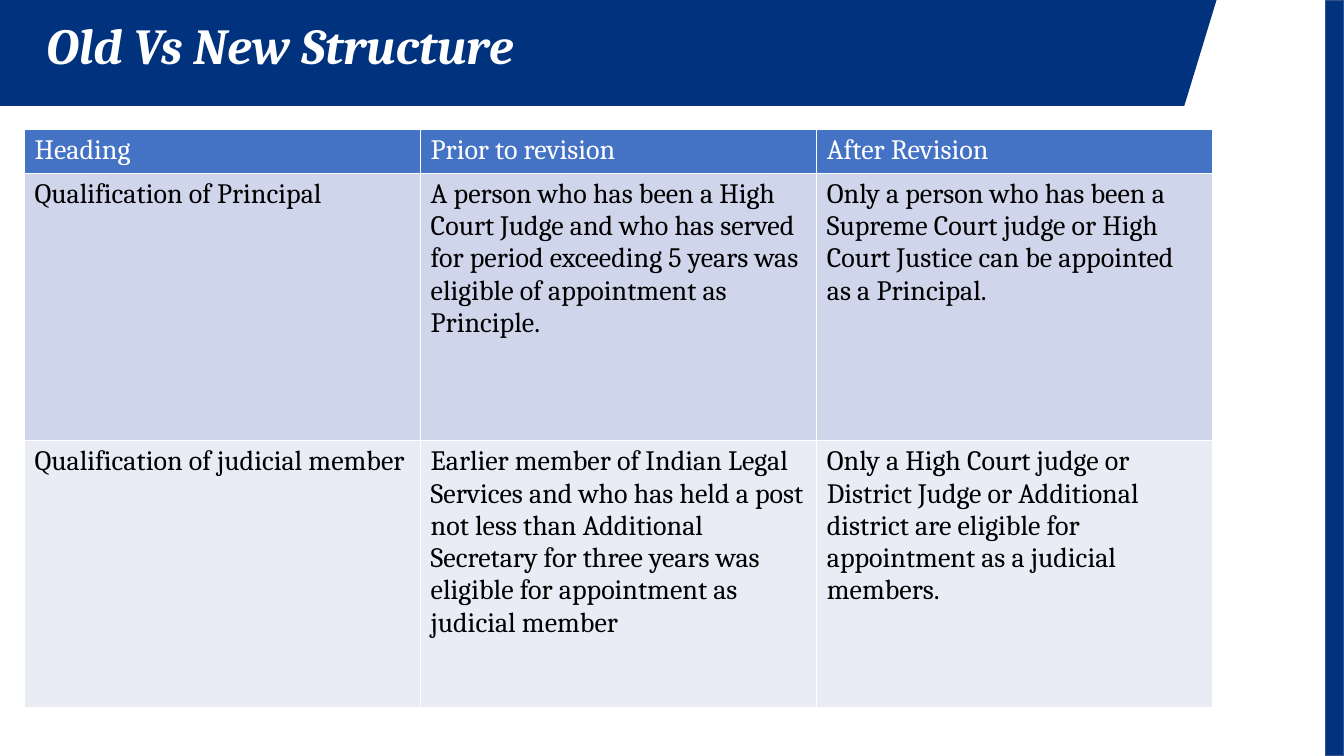
from dataclasses import dataclass

import pptx
import pptx.dml.color
import pptx.enum.shapes
import pptx.enum.text
import pptx.oxml
import pptx.oxml.ns
import pptx.util

Pt = pptx.util.Pt
NAVY = "00327D"
WHITE = "FFFFFF"
FONT = "Cambria"


@dataclass
class Row:
    height: float
    fill: str
    color: str
    texts: tuple[str, str, str]


ROWS = [
    Row(30, "4472C4", WHITE, ("Heading", "Prior to revision", "After Revision")),
    Row(191, "CFD5EA", "000000", (
        "Qualification of Principal",
        "A person who has been a High Court Judge and who has served for period "
        "exceeding 5 years was eligible of appointment as Principle.",
        "Only a person who has been a Supreme Court judge or High Court Justice "
        "can be appointed as a Principal.",
    )),
    Row(191, "E9EBF5", "000000", (
        "Qualification of judicial member",
        "Earlier member of Indian Legal Services and who has held a post not less than "
        "Additional Secretary for three years was eligible for appointment as judicial member",
        "Only a High Court judge or District Judge or Additional district are eligible "
        "for appointment as a judicial members.",
    )),
]


def rgb(value: str) -> pptx.dml.color.RGBColor:
    return pptx.dml.color.RGBColor.from_string(value)


def fill_solid(target, color: str) -> None:
    target.fill.solid()
    target.fill.fore_color.rgb = rgb(color)


def write(tf, text: str, *, size: float, color: str, bold: bool = False,
          italic: bool = False, spacing: float = 1.0) -> None:
    tf.word_wrap = True
    p = tf.paragraphs[0]
    p.line_spacing = spacing
    r = p.add_run()
    r.text = text
    r.font.name = FONT
    r.font.size = Pt(size)
    r.font.bold = bold
    r.font.italic = italic
    r.font.color.rgb = rgb(color)


def add_banner(s) -> None:
    fb = s.shapes.build_freeform(0, 0)
    corners = [(0, 75.6), (846, 75.6), (869, 0)]
    fb.add_line_segments([(Pt(x), Pt(y)) for x, y in corners], close=True)
    sp = fb.convert_to_shape()
    sp.shadow.inherit = False
    fill_solid(sp, NAVY)
    sp.line.fill.background()


def add_side_bar(s) -> None:
    sp = s.shapes.add_shape(pptx.enum.shapes.MSO_SHAPE.RECTANGLE,
                            Pt(947), 0, Pt(13), Pt(540))
    sp.shadow.inherit = False
    fill_solid(sp, NAVY)
    sp.line.color.rgb = rgb("325491")
    sp.line.width = Pt(1)


def add_title(s) -> None:
    tf = s.shapes.add_textbox(Pt(26), Pt(11.5), Pt(662), Pt(46)).text_frame
    tf.vertical_anchor = pptx.enum.text.MSO_ANCHOR.MIDDLE
    write(tf, "Old Vs New Structure", size=36, color=WHITE,
          bold=True, italic=True, spacing=0.9)


def set_borders(cell, color: str, width: float) -> None:
    tcPr = cell._tc.get_or_add_tcPr()
    for side in "LRTB":
        tcPr.append(pptx.oxml.parse_xml(
            f'<a:ln{side} {pptx.oxml.ns.nsdecls("a")} w="{Pt(width)}"><a:solidFill>'
            f'<a:srgbClr val="{color}"/></a:solidFill></a:ln{side}>'))


def add_comparison(s, rows: list[Row]) -> None:
    columns = len(rows[0].texts)
    width = 283
    height = sum(row.height for row in rows)
    table = s.shapes.add_table(len(rows), columns, Pt(17.5), Pt(92.5),
                               Pt(width * columns), Pt(height)).table
    for column in table.columns:
        column.width = Pt(width)
    for i, row in enumerate(rows):
        table.rows[i].height = Pt(row.height)
        for cell, text in zip(table.rows[i].cells, row.texts):
            set_borders(cell, WHITE, 1)
            fill_solid(cell, row.fill)
            write(cell.text_frame, text, size=20, color=row.color)


def main() -> None:
    prs = pptx.Presentation()
    prs.slide_width = Pt(960)
    prs.slide_height = Pt(540)
    s = prs.slides.add_slide(prs.slide_layouts[6])
    add_banner(s)
    add_side_bar(s)
    add_title(s)
    add_comparison(s, ROWS)
    prs.save("out.pptx")


if __name__ == "__main__":
    main()
